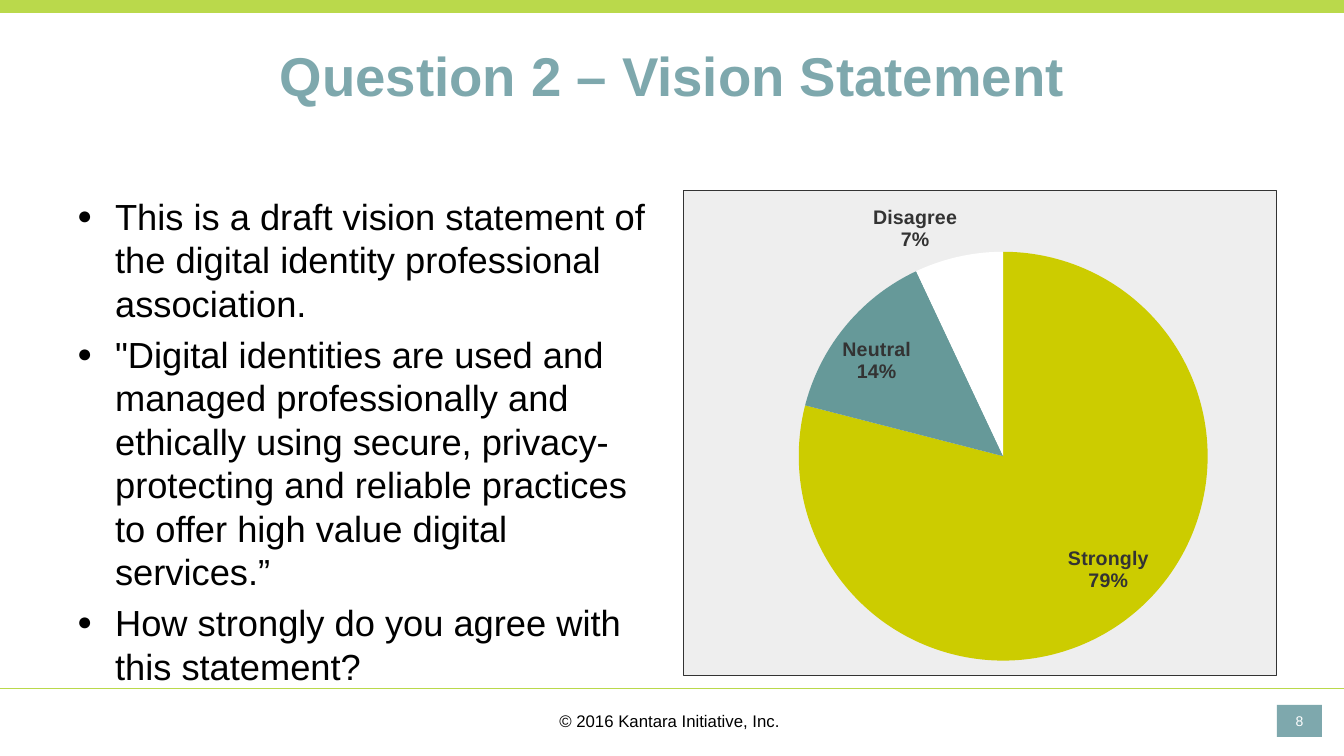
"""Builds the vision statement survey slide with its pie chart."""
from lxml import etree
from pptx import Presentation
from pptx.chart.data import CategoryChartData
from pptx.dml.color import RGBColor
from pptx.enum.chart import XL_CHART_TYPE, XL_LABEL_POSITION
from pptx.enum.shapes import MSO_CONNECTOR, MSO_SHAPE
from pptx.enum.text import MSO_ANCHOR, MSO_AUTO_SIZE, PP_ALIGN
from pptx.oxml import parse_xml
from pptx.oxml.ns import nsdecls, qn
from pptx.util import Emu, Pt

PIE = XL_CHART_TYPE.PIE
BEST_FIT = XL_LABEL_POSITION.BEST_FIT
STRAIGHT = MSO_CONNECTOR.STRAIGHT
RECTANGLE = MSO_SHAPE.RECTANGLE
MIDDLE, TOP = MSO_ANCHOR.MIDDLE, MSO_ANCHOR.TOP
NO_AUTOFIT = MSO_AUTO_SIZE.NONE
CENTER, LEFT = PP_ALIGN.CENTER, PP_ALIGN.LEFT

LIME = RGBColor(0xBA, 0xD9, 0x4B)
TEAL = RGBColor(0x7E, 0xA8, 0xAD)
BLACK = RGBColor(0x00, 0x00, 0x00)
WHITE = RGBColor(0xFF, 0xFF, 0xFF)
CHARCOAL = RGBColor(0x33, 0x33, 0x33)
OLIVE = RGBColor(0xCC, 0xCC, 0x00)
SEA_GREEN = RGBColor(0x66, 0x99, 0x99)

EMU_PER_PX = 914400 / 100.8


def px(*lengths):
    """Turn pixel lengths into EMU."""
    return [Emu(round(length * EMU_PER_PX)) for length in lengths]


def write(shape, lines, size, color, align=CENTER, anchor=MIDDLE, bold=False):
    """Fill a shape with formatted Arial paragraphs."""
    frame = shape.text_frame
    frame.text = "\n".join(lines)
    frame.word_wrap = True
    frame.auto_size = NO_AUTOFIT
    frame.vertical_anchor = anchor
    for paragraph in frame.paragraphs:
        paragraph.alignment = align
        for run in paragraph.runs:
            run.font.name = "Arial"
            run.font.size = Pt(size)
            run.font.bold = bold
            run.font.color.rgb = color
    return frame


presentation = Presentation()
presentation.slide_width, presentation.slide_height = px(1344, 756)
slide = presentation.slides.add_slide(presentation.slide_layouts[1])
shapes = slide.shapes
title, statements = slide.placeholders

top_band = shapes.add_shape(RECTANGLE, *px(0, 0, 1344, 13))
page_number = shapes.add_shape(RECTANGLE, *px(1277, 705, 45, 32))
for block, color in ((top_band, LIME), (page_number, TEAL)):
    block.shadow.inherit = False
    block.fill.solid()
    block.fill.fore_color.rgb = color
    block.line.fill.background()

footer_rule = shapes.add_connector(STRAIGHT, *px(0, 688, 1344, 688))
footer_rule.line.color.rgb = LIME
footer_rule.line.width = Pt(0.5)
etree.SubElement(footer_rule._element.spPr, qn("a:effectLst"))

title.left, title.top, title.width, title.height = px(67, 17, 1210, 116)
write(title, ["Question 2 – Vision Statement"], 39, TEAL, bold=True)

statements.left, statements.top, statements.width, statements.height = px(67, 189, 594, 486)
statement_frame = write(statements, [
    "This is a draft vision statement of the digital identity professional association.",
    "\"Digital identities are used and managed professionally and ethically using secure, "
    "privacy-protecting and reliable practices to offer high value digital services.”",
    "How strongly do you agree with this statement?",
], 25.9, BLACK, LEFT, TOP)
indent, = px(38)
for position, statement in enumerate(statement_frame.paragraphs):
    properties = statement._p.get_or_add_pPr()
    properties.set("marL", str(indent))
    properties.set("indent", str(-indent))
    etree.SubElement(properties, qn("a:buSzPct"), val="70000")
    etree.SubElement(properties, qn("a:buFont"), typeface="Arial")
    etree.SubElement(properties, qn("a:buChar"), char="●")
    statement.space_before = Pt(5.2 if position else 0)

answers = CategoryChartData(number_format="0")
answers.categories = ["Strongly", "Neutral", "Disagree"]
answers.add_series("Series 1", [79, 14, 7])
chart = shapes.add_chart(PIE, *px(683, 190, 593, 485), answers).chart
chart.has_legend = False
chart.has_title = False
chart.font.name = "Lato"
chart.font.size = Pt(10)
chart.font.color.rgb = CHARCOAL

pie = chart.plots[0]
pie.vary_by_categories = True
for index, color in enumerate((OLIVE, SEA_GREEN, WHITE)):
    slice_fill = pie.series[0].points[index].format.fill
    slice_fill.solid()
    slice_fill.fore_color.rgb = color

labels = pie.series[0].data_labels
labels.show_value = False
labels.show_category_name = True
labels.show_percentage = True
labels.number_format = "0%"
labels.number_format_is_linked = False
labels.position = BEST_FIT
labels.font.name = "Arial"
labels.font.size = Pt(14)
labels.font.bold = True
labels.font.color.rgb = CHARCOAL
separator = etree.Element(qn("c:separator"))
separator.text = "\n"
labels._element.find(qn("c:showBubbleSize")).addnext(separator)

plot_area = chart._chartSpace.chart.plotArea
for old_layout in plot_area.findall(qn("c:layout")):
    plot_area.remove(old_layout)
plot_area.insert(0, parse_xml(
    f'<c:layout {nsdecls("c")}><c:manualLayout><c:layoutTarget val="inner"/>'
    '<c:xMode val="edge"/><c:yMode val="edge"/><c:x val="0.195"/><c:y val="0.126"/>'
    '<c:w val="0.69"/><c:h val="0.846"/></c:manualLayout></c:layout>'))
background = '<a:solidFill><a:srgbClr val="EEEEEE"/></a:solidFill>'
plot_area.append(parse_xml(f'<c:spPr {nsdecls("c", "a")}>{background}</c:spPr>'))
chart._chartSpace.chart.addnext(parse_xml(
    f'<c:spPr {nsdecls("c", "a")}>{background}<a:ln w="3175"><a:solidFill>'
    '<a:srgbClr val="333333"/></a:solidFill></a:ln></c:spPr>'))

number_frame = write(page_number, ["8"], 10, WHITE)
number_frame.margin_left = number_frame.margin_right = px(4)[0]
number_frame.margin_top = number_frame.margin_bottom = px(4)[0]

copyright_line = shapes.add_textbox(*px(445, 701, 454, 40))
write(copyright_line, ["© 2016 Kantara Initiative, Inc. "], 12, BLACK)

presentation.save("out.pptx")
